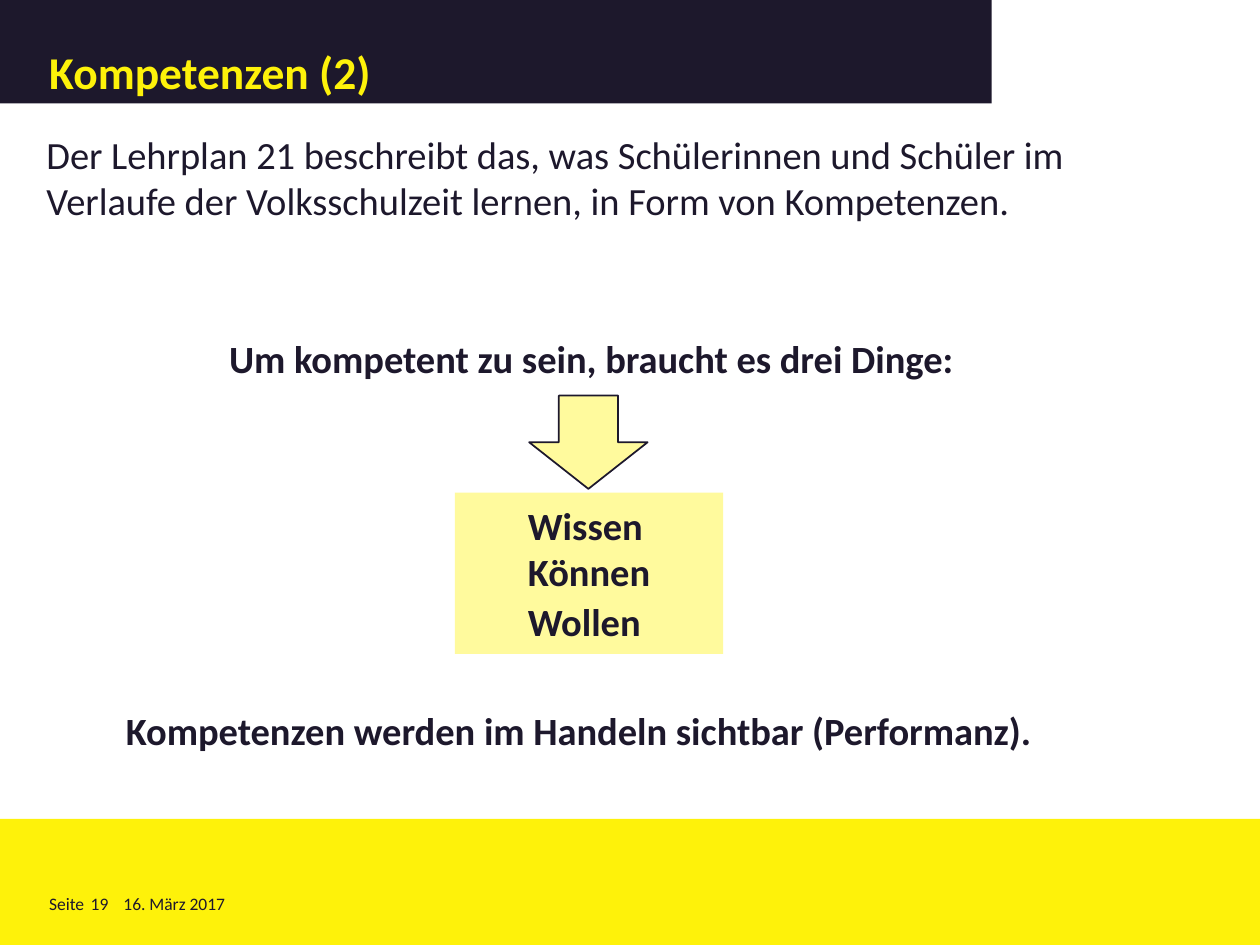
import pptx
import pptx.dml.color
import pptx.enum.shapes
import pptx.enum.text
import pptx.oxml
import pptx.util
from pptx.util import Inches

COLORS = {"dark": "1D182C", "yellow": "FEF20A", "pale": "FFFA9D"}
FONT = "Calibri"
TITLE = "Kompetenzen (2)"
REQUIREMENTS = ["Wissen", "Können", "Wollen"]
STATEMENTS = [
    ("Der Lehrplan 21 beschreibt das, was Schülerinnen und Schüler im Verlaufe "
     "der Volksschulzeit lernen, in Form von Kompetenzen.",
     (0.27, 0.99, 9.25, 0.84), False),
    ("Um kompetent zu sein, braucht es drei Dinge:", (1.72, 2.61, 6.02, 0.47), True),
    ("Kompetenzen werden im Handeln sichtbar (Performanz).", (0.9, 5.56, 7.53, 0.47), True),
]
FOOTER = [("Seite", 0.39, 0.35), ("19", 0.72, 0.3), ("16. März 2017", 0.98, 2.28)]
FOOTER_TOP, FOOTER_HEIGHT = 7.09, 0.17


def rgb(name):
    return pptx.dml.color.RGBColor.from_string(COLORS[name])


def fill(shape, color):
    shape.fill.solid()
    shape.fill.fore_color.rgb = rgb(color)


def place(shape, box):
    shape.left, shape.top, shape.width, shape.height = map(Inches, box)


def set_insets(frame, left, top, right, bottom):
    frame.margin_left, frame.margin_top = Inches(left), Inches(top)
    frame.margin_right, frame.margin_bottom = Inches(right), Inches(bottom)


def style(frame, size, color="dark", bold=False):
    frame.word_wrap = True
    frame.auto_size = pptx.enum.text.MSO_AUTO_SIZE.NONE
    for paragraph in frame.paragraphs:
        paragraph.alignment = pptx.enum.text.PP_ALIGN.LEFT
        for run in paragraph.runs:
            run.font.name, run.font.size = FONT, pptx.util.Pt(size)
            run.font.bold, run.font.color.rgb = bold, rgb(color)


def add_preset(slide, kind, box, color):
    shape = slide.shapes.add_shape(kind, *map(Inches, box))
    shape.shadow.inherit = False
    fill(shape, color)
    shape.line.fill.background()
    return shape


def add_text(slide, text, box, size, bold=False):
    frame = slide.shapes.add_textbox(*map(Inches, box)).text_frame
    frame.text = text
    style(frame, size, bold=bold)
    return frame


def add_title(slide):
    title = slide.shapes.title
    place(title, (0, 0, 7.87, 0.82))
    fill(title, "dark")
    frame = title.text_frame
    frame.text = TITLE
    style(frame, 26, "yellow", True)
    set_insets(frame, 0.39, 0.08, 0.08, 0.04)
    frame.vertical_anchor = pptx.enum.text.MSO_ANCHOR.BOTTOM
    frame.paragraphs[0].line_spacing = 0.8


def add_requirements(slide):
    requirements = slide.placeholders[1]
    place(requirements, (3.61, 3.91, 2.13, 1.28))
    fill(requirements, "pale")
    frame = requirements.text_frame
    frame.text = "\n".join(REQUIREMENTS)
    for paragraph in frame.paragraphs:
        properties = paragraph._p.get_or_add_pPr()
        properties.set("marL", "0")
        properties.set("indent", "0")
        properties.append(pptx.oxml.parse_xml(
            '<a:buNone xmlns:a="http://schemas.openxmlformats.org/drawingml/2006/main"/>'))
        paragraph.space_before = pptx.util.Pt(0)
    frame.paragraphs[-1].space_before = pptx.util.Pt(2)
    style(frame, 22, bold=True)
    set_insets(frame, 0.58, 0.05, 0.1, 0.05)
    frame.vertical_anchor = pptx.enum.text.MSO_ANCHOR.MIDDLE


def main():
    """Build the competences slide and save it."""
    presentation = pptx.Presentation()
    presentation.slide_width, presentation.slide_height = Inches(10), Inches(7.5)
    slide = presentation.slides.add_slide(presentation.slide_layouts[1])
    presets = pptx.enum.shapes.MSO_SHAPE

    add_preset(slide, presets.RECTANGLE, (0, 6.5, 10, 1), "yellow")
    add_title(slide)
    for text, left, width in FOOTER:
        frame = add_text(slide, text, (left, FOOTER_TOP, width, FOOTER_HEIGHT), 10)
        set_insets(frame, 0, 0, 0, 0)

    arrow = add_preset(slide, presets.DOWN_ARROW, (4.2, 3.14, 0.94, 0.74), "pale")
    arrow.line.color.rgb = rgb("dark")
    arrow.line.width = pptx.util.Pt(1)
    add_requirements(slide)
    for text, box, bold in STATEMENTS:
        add_text(slide, text, box, 22, bold)

    presentation.save("out.pptx")


if __name__ == "__main__":
    main()
